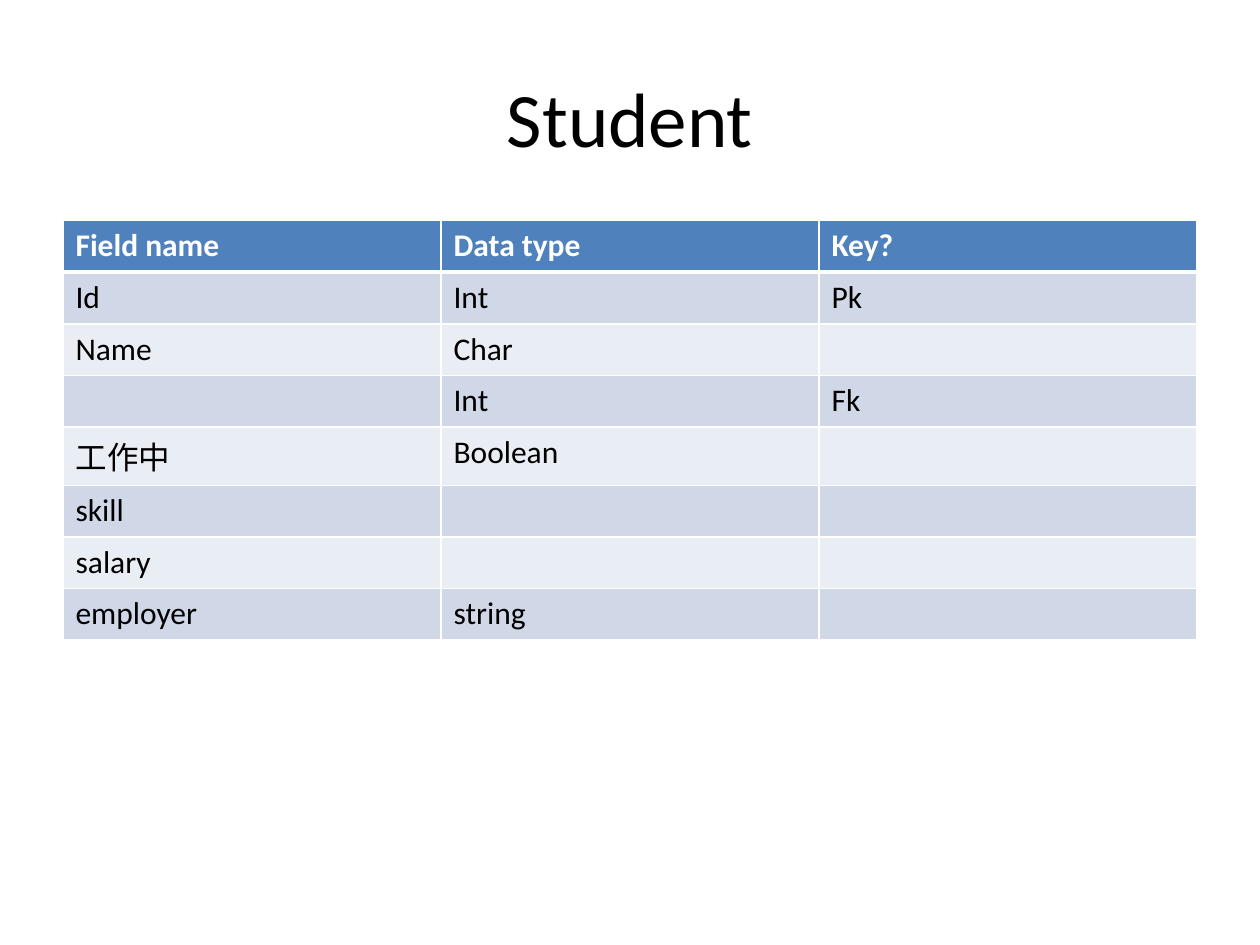
from lxml import etree
from pptx import Presentation
from pptx import util as u
from pptx.dml import color
from pptx.enum import text
from pptx.oxml import ns

FIELDS = [
    ("Field name", "Data type", "Key?"),
    ("Id", "Int", "Pk"),
    ("Name", "Char", ""),
    ("", "Int", "Fk"),
    ("工作中", "Boolean", ""),
    ("skill", "", ""),
    ("salary", "", ""),
    ("employer", "string", ""),
]
HEADER_FILL, BAND_FILLS = "4F81BD", ("E9EDF4", "D0D8E8")
WHITE, BLACK = "FFFFFF", "000000"
MARGIN, COLUMN, ROW = u.Inches(0.5), u.Inches(3), u.Inches(0.41)


def rgb(value):
    """Turn a hex string into a colour."""
    return color.RGBColor.from_string(value)


def style_font(paragraph, size, ink, bold=False):
    """Set the font of a whole paragraph."""
    font = paragraph.font
    font.name, font.size, font.bold = "Calibri", u.Pt(size), bold
    font.color.rgb = rgb(ink)


def add_border(cell, side, points):
    """Draw one white edge of a cell."""
    edge = etree.SubElement(cell._tc.get_or_add_tcPr(), ns.qn(f"a:ln{side}"), w=str(u.Pt(points)))
    paint = etree.SubElement(edge, ns.qn("a:solidFill"))
    etree.SubElement(paint, ns.qn("a:srgbClr"), val=WHITE)


def add_title(slide, wording):
    """Fill and place the title placeholder."""
    title = slide.shapes.title
    title.left, title.top = MARGIN, u.Inches(0.3)
    title.width, title.height = 3 * COLUMN, u.Inches(1.25)
    title.text_frame.text = wording
    title.text_frame.vertical_anchor = text.MSO_ANCHOR.MIDDLE
    heading = title.text_frame.paragraphs[0]
    heading.alignment = text.PP_ALIGN.CENTER
    style_font(heading, 44, BLACK)


def fill_cell(cell, wording, row):
    """Write and paint a cell according to its row."""
    header = row == 0
    cell.text = wording
    style_font(cell.text_frame.paragraphs[0], 18, WHITE if header else BLACK, header)
    for side in "LRTB":
        heavy = (row, side) in ((0, "B"), (1, "T"))
        add_border(cell, side, 3 if heavy else 1)
    cell.fill.solid()
    cell.fill.fore_color.rgb = rgb(HEADER_FILL if header else BAND_FILLS[row % 2])


def add_field_table(slide, fields):
    """Add the table of fields on an even grid."""
    rows, columns = len(fields), len(fields[0])
    table = slide.shapes.add_table(
        rows, columns, MARGIN, u.Inches(1.75), columns * COLUMN, rows * ROW
    ).table
    for row, field in enumerate(fields):
        for column, wording in enumerate(field):
            fill_cell(table.cell(row, column), wording, row)


def main():
    """Build the slide and save it."""
    deck = Presentation()
    deck.slide_width, deck.slide_height = u.Inches(10), u.Inches(7.5)
    slide = deck.slides.add_slide(deck.slide_layouts[5])
    add_title(slide, "Student")
    add_field_table(slide, FIELDS)
    deck.save("out.pptx")


if __name__ == "__main__":
    main()
